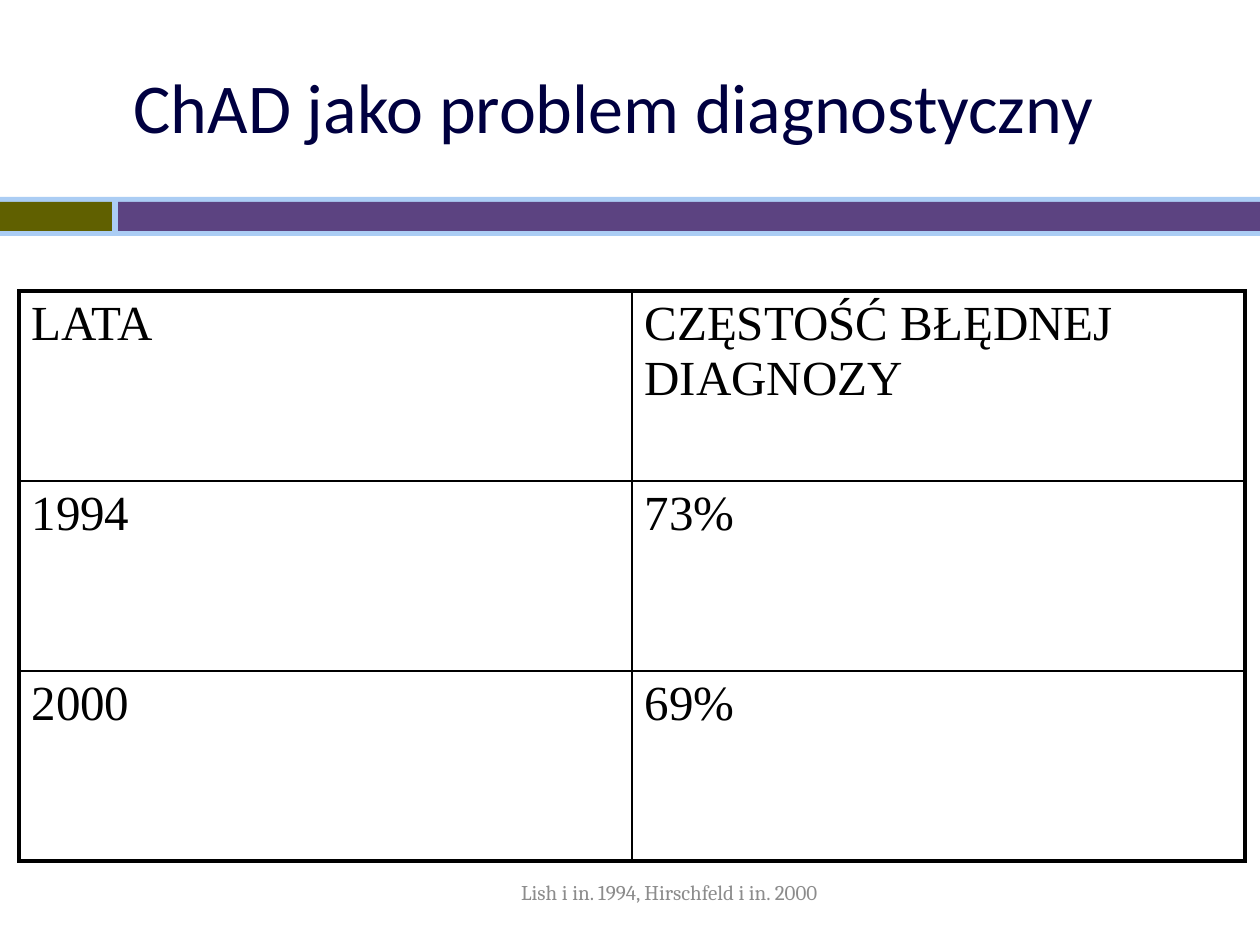
from dataclasses import dataclass

import lxml.etree
import pptx
import pptx.dml.color
import pptx.enum.shapes
import pptx.enum.text
import pptx.oxml.ns
import pptx.util

ALIGN = pptx.enum.text.PP_ALIGN
MIDDLE = pptx.enum.text.MSO_ANCHOR.MIDDLE
RECT = pptx.enum.shapes.MSO_SHAPE.RECTANGLE


@dataclass(frozen=True)
class Font:
    face: str
    size: int
    color: str


@dataclass(frozen=True)
class Theme:
    pale: str = "ABCDF4"
    olive: str = "606000"
    plum: str = "5C4381"
    line: str = "000000"
    thick: float = 2.25
    thin: float = 1
    title: Font = Font("Calibri", 40, "000040")
    body: Font = Font("Times New Roman", 28, "000000")
    note: Font = Font("Cambria", 12, "8C8C8C")


@dataclass(frozen=True)
class Box:
    left: int
    top: int
    width: int
    height: int


@dataclass(frozen=True)
class Bar:
    box: Box
    color: str


@dataclass(frozen=True)
class Label:
    box: Box
    text: str
    font: Font
    align: ALIGN


THEME = Theme()
BARS = [
    Bar(Box(0, 197, 1260, 39), THEME.pale),
    Bar(Box(0, 202, 112, 29), THEME.olive),
    Bar(Box(118, 202, 1142, 29), THEME.plum),
]
LABELS = [
    Label(Box(1, 26, 1225, 159), "ChAD jako problem diagnostyczny",
          THEME.title, ALIGN.CENTER),
    Label(Box(431, 861, 399, 63), "Lish i in. 1994, Hirschfeld i in. 2000",
          THEME.note, ALIGN.RIGHT),
]
GRID = Box(19, 291, 1226, 570)
ROWS = [
    ("LATA", "CZĘSTOŚĆ BŁĘDNEJ DIAGNOZY"),
    ("1994", "73%"),
    ("2000", "69%"),
]


def emu(px: int) -> int:
    return round(px * 914400 / 126)


def place(box: Box) -> list[int]:
    return [emu(px) for px in (box.left, box.top, box.width, box.height)]


def tint(text: str) -> pptx.dml.color.RGBColor:
    return pptx.dml.color.RGBColor.from_string(text)


def write(frame, text: str, font: Font, align: ALIGN) -> None:
    frame.word_wrap = True
    para = frame.paragraphs[0]
    para.alignment = align
    run = para.add_run()
    run.text = text
    run.font.name = font.face
    run.font.size = pptx.util.Pt(font.size)
    run.font.color.rgb = tint(font.color)


def draw_bar(slide, bar: Bar) -> None:
    shape = slide.shapes.add_shape(RECT, *place(bar.box))
    shape.shadow.inherit = False
    shape.fill.solid()
    shape.fill.fore_color.rgb = tint(bar.color)
    shape.line.fill.background()


def draw_label(slide, label: Label) -> None:
    frame = slide.shapes.add_textbox(*place(label.box)).text_frame
    frame.vertical_anchor = MIDDLE
    write(frame, label.text, label.font, label.align)


def edge(cell, side: str, outer: bool) -> None:
    width = pptx.util.Pt(THEME.thick if outer else THEME.thin)
    name = pptx.oxml.ns.qn
    props = cell._tc.get_or_add_tcPr()
    line = lxml.etree.SubElement(props, name(f"a:ln{side}"), w=str(int(width)))
    fill = lxml.etree.SubElement(line, name("a:solidFill"))
    lxml.etree.SubElement(fill, name("a:srgbClr"), val=THEME.line)


def draw_grid(slide, box: Box, rows: list[tuple[str, ...]]) -> None:
    high, wide = len(rows), len(rows[0])
    table = slide.shapes.add_table(high, wide, *place(box)).table
    table.first_row = False
    table.horz_banding = False
    for col in table.columns:
        col.width = emu(box.width // wide)
    for row in table.rows:
        row.height = emu(box.height // high)
    for y, row in enumerate(rows):
        for x, text in enumerate(row):
            cell = table.cell(y, x)
            write(cell.text_frame, text, THEME.body, ALIGN.LEFT)
            edge(cell, "L", x == 0)
            edge(cell, "R", x == wide - 1)
            edge(cell, "T", y == 0)
            edge(cell, "B", y == high - 1)
            cell.fill.background()


def main() -> None:
    deck = pptx.Presentation()
    deck.slide_width = emu(1260)
    deck.slide_height = emu(945)
    slide = deck.slides.add_slide(deck.slide_layouts[6])
    for bar in BARS:
        draw_bar(slide, bar)
    draw_grid(slide, GRID, ROWS)
    for label in LABELS:
        draw_label(slide, label)
    deck.save("out.pptx")


if __name__ == "__main__":
    main()
